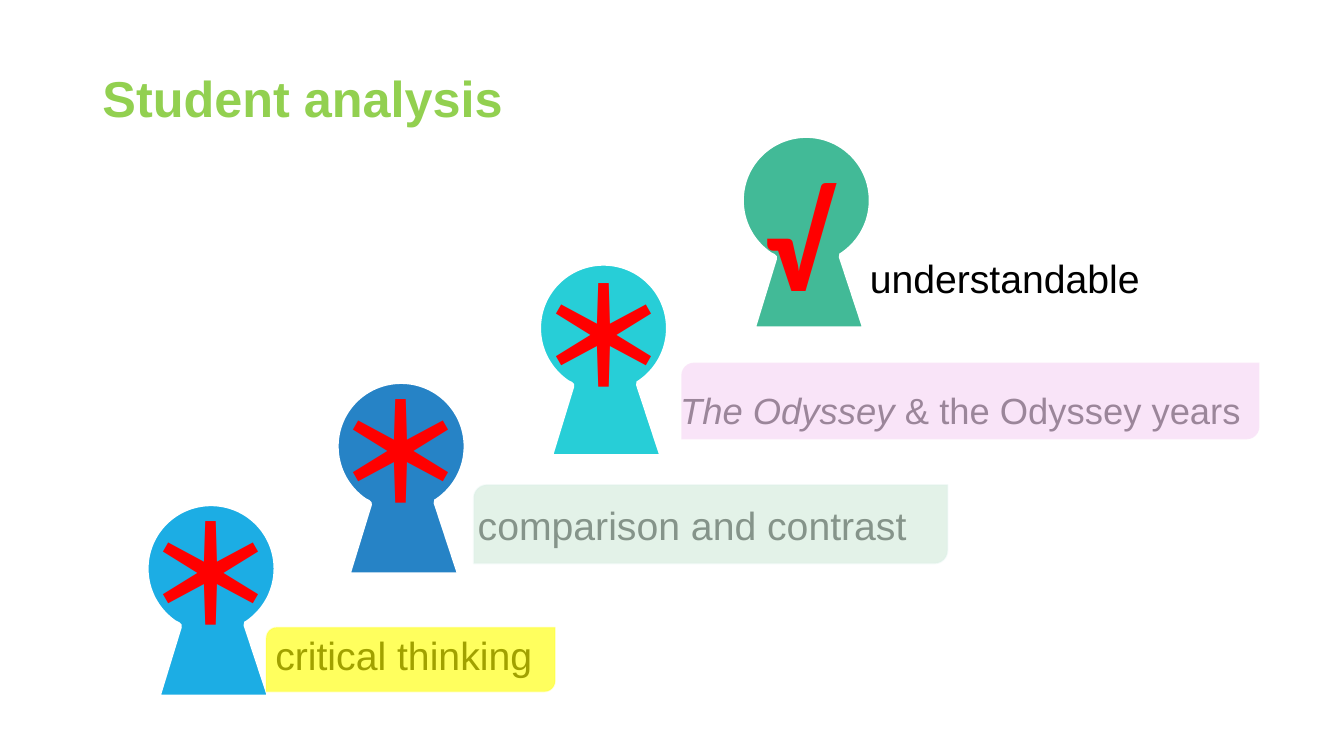
"""Build the student analysis slide: four keyhole steps with labels and marks."""
import lxml.etree
import pptx
import pptx.dml.color
import pptx.enum.shapes
import pptx.enum.text
import pptx.oxml.ns
import pptx.util

Cm = pptx.util.Cm
qn = pptx.oxml.ns.qn
RED = "FF0000"
CJK = "Noto Sans CJK SC"

KEYHOLE_TOP = (0, -1.68)
KEYHOLE_SEGMENTS = [
    [(0.93, -1.68), (1.68, -0.93), (1.68, 0)],
    [(1.68, 0.58), (1.39, 1.09), (0.94, 1.4)],
    [(0.92, 1.4)], [(1.54, 3.28)], [(-1.4, 3.28)], [(-0.84, 1.45)], [(-0.94, 1.4)],
    [(-1.39, 1.09), (-1.68, 0.58), (-1.68, 0)],
    [(-1.68, -0.93), (-0.93, -1.68), (0, -1.68)],
]
STEPS = [
    ((20.32, 5.05), "42BA97", (21.67, 6.43, 10.41, 1.14),
     [("understandable", False)], 28),
    ((15.21, 8.27), "27CED7", (16.89, 9.75, 16.15, 1.14),
     [("The Odyssey", True), (" & the Odyssey years", False)], 26),
    ((10.11, 11.25), "2683C6", (11.79, 12.65, 16.23, 1.14),
     [("comparison and contrast", False)], 28),
    ((5.32, 14.33), "1CADE4", (6.69, 15.93, 10.54, 1.14),
     [("critical thinking", False)], 28),
]
MARKS = [
    ("√", "Calibri", (19.02, 3.84, 2.36, 4.37)),
    ("＊", CJK, (13.26, 6.23, 3.91, 4.37)),
    ("＊", CJK, (8.15, 9.14, 3.91, 4.37)),
    ("＊", CJK, (3.36, 12.22, 3.91, 4.37)),
]
VEILS = [
    ((17.17, 9.14, 14.57, 1.93), "F7D5F5", "FFFFFF", 10),
    ((11.94, 12.22, 11.94, 1.98), "D4EBDB", "D9F1EA", 26),
    ((6.71, 15.81, 7.28, 1.62), "FFFF00", "FFFF00", 15),
]


def rgb(value):
    """Return the colour for a hex string."""
    return pptx.dml.color.RGBColor.from_string(value)


def paint(shape, fill, line, width):
    """Give a shape a plain fill and outline without a shadow."""
    shape.shadow.inherit = False
    shape.fill.solid()
    shape.fill.fore_color.rgb = rgb(fill)
    shape.line.color.rgb = rgb(line)
    shape.line.width = pptx.util.Pt(width)


def bend(outline, segments):
    """Turn each three-point segment of a straight outline into a curve."""
    sides = iter(list(outline.element.iter(qn("a:lnTo"))))
    for segment in segments:
        first, *others = [next(sides) for _ in segment]
        if others:
            curve = lxml.etree.Element(qn("a:cubicBezTo"))
            first.addprevious(curve)
            for side in (first, *others):
                curve.append(side[0])
                side.getparent().remove(side)


def add_keyhole(shapes, centre, colour):
    """Draw a round head on a flared base around the given centre."""
    def place(point):
        """Move a point from the centre to the slide."""
        return Cm(centre[0] + point[0]), Cm(centre[1] + point[1])

    builder = shapes.build_freeform(*place(KEYHOLE_TOP), scale=1.0)
    points = [place(point) for segment in KEYHOLE_SEGMENTS for point in segment]
    builder.add_line_segments(points, close=True)
    keyhole = builder.convert_to_shape()
    bend(keyhole, KEYHOLE_SEGMENTS)
    paint(keyhole, colour, "FFFFFF", 6)


def add_text(shapes, place, runs, size, colour="000000", font="Arial", bold=False):
    """Add a middle-anchored, wrapping text box and return its frame."""
    frame = shapes.add_textbox(*map(Cm, place)).text_frame
    frame.word_wrap = True
    frame.vertical_anchor = pptx.enum.text.MSO_ANCHOR.MIDDLE
    for words, italic in runs:
        run = frame.paragraphs[0].add_run()
        run.text = words
        run.font.size = pptx.util.Pt(size)
        run.font.name = font
        run.font.bold = bold
        run.font.italic = italic
        run.font.color.rgb = rgb(colour)
        east_asian = lxml.etree.SubElement(run.font._element, qn("a:ea"))
        east_asian.set("typeface", font)
    return frame


def add_mark(shapes, symbol, font, place):
    """Add a large red symbol."""
    frame = add_text(shapes, place, [(symbol, False)], 96, RED, font, True)
    frame.word_wrap = False
    frame.vertical_anchor = pptx.enum.text.MSO_ANCHOR.TOP
    frame.auto_size = pptx.enum.text.MSO_AUTO_SIZE.SHAPE_TO_FIT_TEXT


def add_veil(shapes, place, fill, line, line_opacity):
    """Lay a translucent panel over a label."""
    kind = pptx.enum.shapes.MSO_SHAPE.ROUND_2_DIAG_RECTANGLE
    veil = shapes.add_shape(kind, *map(Cm, place))
    paint(veil, fill, line, 1.25)
    colours = veil.element.iter(qn("a:srgbClr"))
    for colour, opacity in zip(colours, (63, line_opacity)):
        alpha = lxml.etree.SubElement(colour, qn("a:alpha"))
        alpha.set("val", str(opacity * 1000))


def main():
    """Build and save the slide."""
    deck = pptx.Presentation()
    deck.slide_width, deck.slide_height = Cm(33.87), Cm(19.05)
    shapes = deck.slides.add_slide(deck.slide_layouts[6]).shapes
    for centre, colour, place, runs, size in STEPS:
        step = shapes.add_group_shape().shapes
        add_keyhole(step, centre, colour)
        add_text(step, place, runs, size)
    title = add_text(shapes, (1.18, 0.71, 12.9, 3.48),
                     [("Student analysis", False)], 36, "92D050", bold=True)
    title.paragraphs[0].alignment = pptx.enum.text.PP_ALIGN.CENTER
    for symbol, font, place in MARKS:
        add_mark(shapes, symbol, font, place)
    for place, fill, line, line_opacity in VEILS:
        add_veil(shapes, place, fill, line, line_opacity)
    deck.save("out.pptx")


if __name__ == "__main__":
    main()
